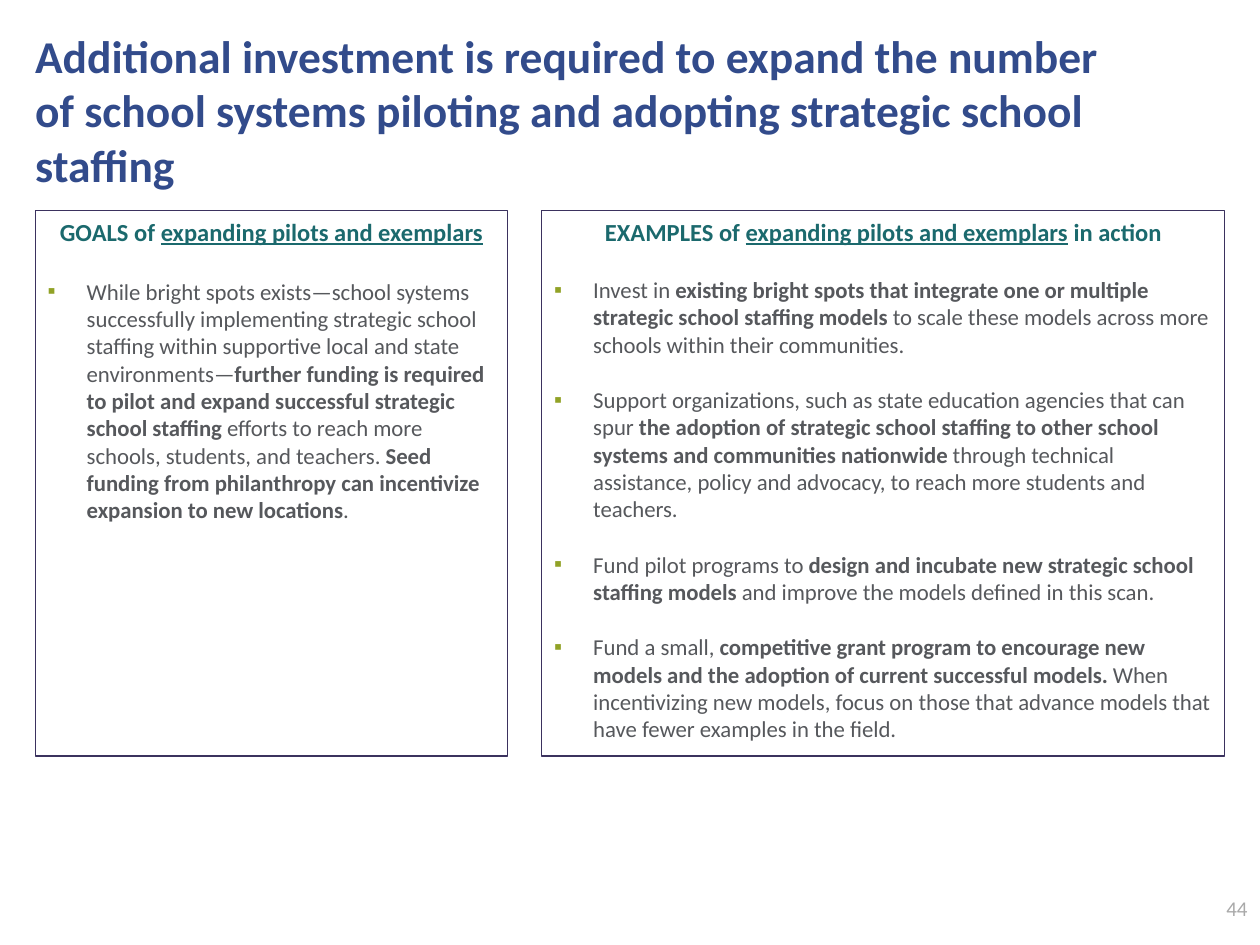
"""Build the slide on expanding pilots and exemplars of strategic school staffing."""
import pptx
import pptx.dml.color
import pptx.enum.shapes
import pptx.enum.text
import pptx.oxml
import pptx.oxml.ns
import pptx.util
from pptx.util import Inches

RGBColor = pptx.dml.color.RGBColor
ALIGN = pptx.enum.text.PP_ALIGN
ANCHOR = pptx.enum.text.MSO_ANCHOR

NAVY = RGBColor(0x32, 0x4B, 0x8B)
PURPLE = RGBColor(0x3B, 0x32, 0x5E)
TEAL = RGBColor(0x1B, 0x69, 0x6D)
GREEN = RGBColor(0x91, 0xA2, 0x26)
GRAY = RGBColor(0x56, 0x58, 0x5C)
SILVER = RGBColor(0xA9, 0xA9, 0xA9)

BOLD = {"bold": True}
UNDERLINE = {"underline": True}
PANEL_TOP, PANEL_HEIGHT = 1.67, 4.33

GOALS_HEADING = [("GOALS of ", {}), ("expanding pilots and exemplars", UNDERLINE)]
GOALS = [
    [("While bright spots exists—school systems successfully implementing strategic "
      "school staffing within supportive local and state environments—", {}),
     ("further funding is required to pilot and expand successful strategic school staffing", BOLD),
     (" efforts to reach more schools, students, and teachers. ", {}),
     ("Seed funding from philanthropy can incentivize expansion to new locations", BOLD),
     (".", {})],
]
EXAMPLES_HEADING = [("EXAMPLES of ", {}), ("expanding pilots and exemplars", UNDERLINE),
                    (" in action", {})]
EXAMPLES = [
    [("Invest in ", {}),
     ("existing bright spots that integrate one or multiple strategic school staffing models ", BOLD),
     ("to scale these models across more schools within their communities.", {})],
    [("Support organizations, such as state education agencies that can spur ", {}),
     ("the adoption of strategic school staffing to other school systems and communities "
      "nationwide ", BOLD),
     ("through technical assistance, policy and advocacy, to reach more students and teachers.", {})],
    [("Fund pilot programs to ", {}),
     ("design and incubate new strategic school staffing models ", BOLD),
     ("and improve the models defined in this scan.", {})],
    [("Fund a small, ", {}),
     ("competitive grant program to encourage new models and the adoption of current "
      "successful models. ", BOLD),
     ("When incentivizing new models, focus on those that advance models that have fewer "
      "examples in the field.", {})],
]


class SlideBuilder:
    """Hold the text style and the current page, and add each kind of element."""

    def __init__(self, page, font="Calibri"):
        self.page = page
        self.font = font

    def add_spans(self, para, spans, size, color, **base):
        for text, changes in spans:
            span = para.add_run()
            span.text = text
            style = {"name": self.font, "size": pptx.util.Pt(size), **base, **changes}
            for name, value in style.items():
                setattr(span.font, name, value)
            span.font.color.rgb = color

    def text_box(self, left, top, width, height, **frame):
        box = self.page.shapes.add_textbox(*map(Inches, (left, top, width, height)))
        for name, value in {"word_wrap": True, **frame}.items():
            setattr(box.text_frame, name, value)
        return box.text_frame.paragraphs[0]

    def title(self, lines):
        para = self.text_box(0.28, 0.22, 9.43, 0.58, margin_left=0, margin_top=0,
                             margin_right=0, margin_bottom=0)
        for index, line in enumerate(lines):
            if index:
                para.add_line_break()
            self.add_spans(para, [(line, BOLD)], 26, NAVY)

    def page_number(self, number):
        para = self.text_box(9.33, 7.06, 0.67, 0.3, vertical_anchor=ANCHOR.MIDDLE)
        para.alignment = ALIGN.RIGHT
        self.add_spans(para, [(number, {})], 12, SILVER)

    def bullet(self, para):
        properties = para._p.get_or_add_pPr()
        properties.set("marL", str(Inches(0.31)))
        properties.set("indent", str(-Inches(0.31)))
        namespace = pptx.oxml.ns.nsdecls("a")
        for xml in (f'<a:buClr {namespace}><a:srgbClr val="{GREEN}"/></a:buClr>',
                    f'<a:buFont {namespace} typeface="Arial"/>',
                    f'<a:buChar {namespace} char="▪"/>'):
            properties.append(pptx.oxml.parse_xml(xml))

    def panel(self, left, width, heading, items, first_gap):
        shape = self.page.shapes.add_shape(
            pptx.enum.shapes.MSO_SHAPE.RECTANGLE,
            *map(Inches, (left, PANEL_TOP, width, PANEL_HEIGHT)))
        shape.shadow.inherit = False
        shape.fill.background()
        shape.line.color.rgb = PURPLE
        shape.line.width = pptx.util.Pt(0.75)
        frame = shape.text_frame
        frame.word_wrap = True
        frame.vertical_anchor = ANCHOR.TOP
        para = frame.paragraphs[0]
        para.alignment = ALIGN.CENTER
        self.add_spans(para, heading, 14, TEAL, bold=True)
        for index, item in enumerate(items):
            para = frame.add_paragraph()
            para.alignment = ALIGN.LEFT
            para.space_before = pptx.util.Pt(16 if index else first_gap)
            self.bullet(para)
            self.add_spans(para, item, 13, GRAY, bold=False)


def main():
    deck = pptx.Presentation()
    deck.slide_width, deck.slide_height = Inches(10), Inches(7.5)
    builder = SlideBuilder(deck.slides.add_slide(deck.slide_layouts[6]))
    builder.title(["Additional investment is required to expand the number ",
                   "of school systems piloting and adopting strategic school staffing"])
    builder.panel(0.28, 3.75, GOALS_HEADING, GOALS, first_gap=18)
    builder.panel(4.3, 5.42, EXAMPLES_HEADING, EXAMPLES, first_gap=17)
    builder.page_number("44")
    deck.save("out.pptx")


if __name__ == "__main__":
    main()
